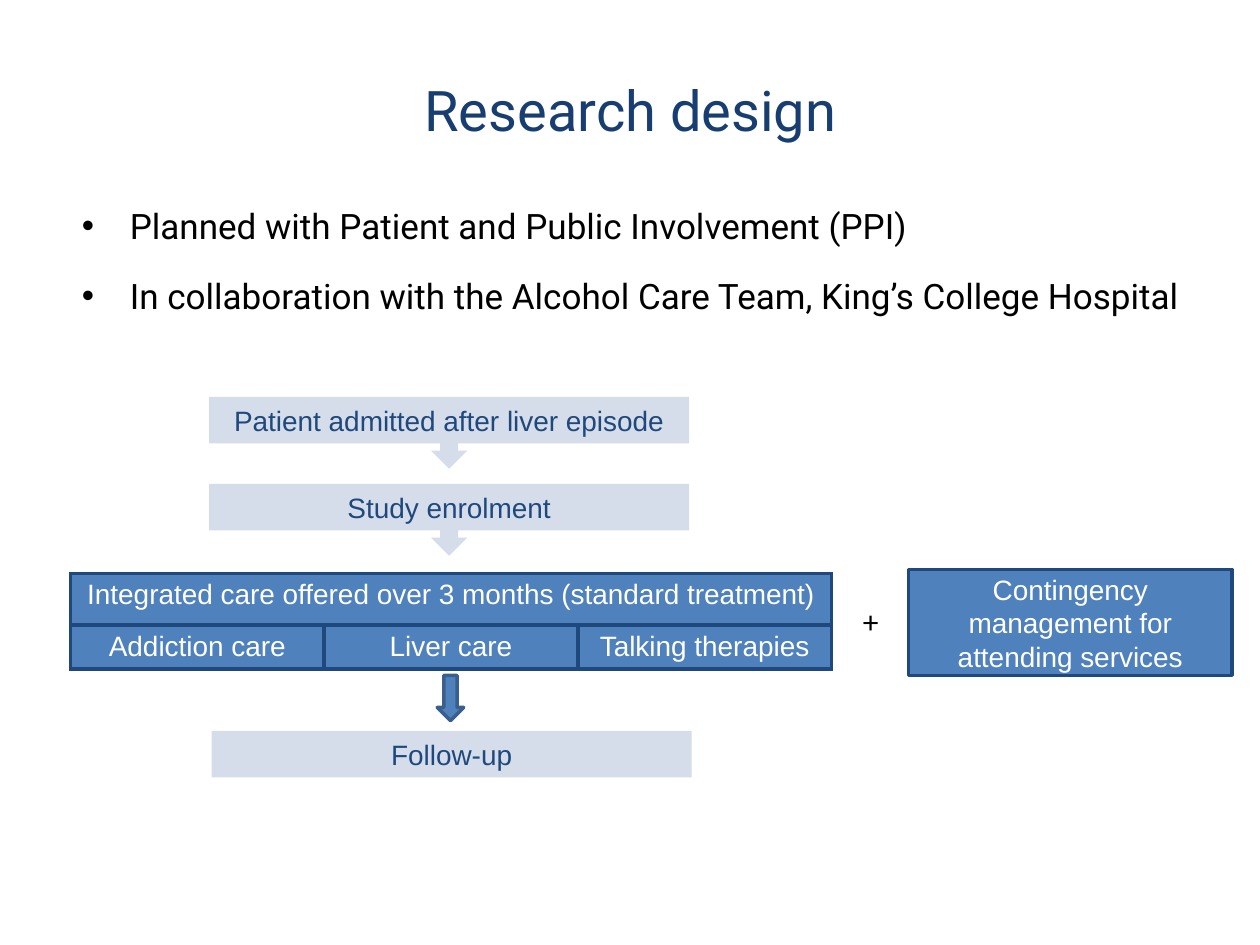
from lxml import etree
from pptx import Presentation
from pptx.dml.color import RGBColor
from pptx.enum import shapes, text
from pptx.oxml import ns
from pptx.util import Inches, Pt

# Content
TITLE = "Research design"
POINTS = ["Planned with Patient and Public Involvement (PPI)",
          "In collaboration with the Alcohol Care Team, King’s College Hospital"]
STEPS = ["Patient admitted after liver episode", "Study enrolment"]
CARE = "Integrated care offered over 3 months (standard treatment)"
PARTS = ["Addiction care", "Liver care", "Talking therapies"]
EXTRA = "Contingency management for attending services"
LAST = "Follow-up"

COLORS = {"title": "183D71", "ink": "000000", "navy": "1F497D", "blue": "4F81BD",
          "edge": "3A5F8C", "pale": "D5DCEA", "white": "FFFFFF"}
KIND = shapes.MSO_SHAPE
ALIGN = text.PP_ALIGN


def rgb(name):
    return RGBColor.from_string(COLORS[name])


def style(para, size, face, color, align=ALIGN.CENTER):
    para.alignment = align
    for run in para.runs:
        font = run.font
        font.size, font.name, font.bold = Pt(size), face, False
        font.color.rgb = rgb(color)


def place(item, *box):
    item.left, item.top, item.width, item.height = map(Inches, box)


def add_box(kind, box, fill, words="", color="navy", line=None):
    shape = slide.shapes.add_shape(kind, *map(Inches, box))
    shape.shadow.inherit = False
    shape.fill.solid()
    shape.fill.fore_color.rgb = rgb(fill)
    if line:
        shape.line.color.rgb = rgb(line)
        shape.line.width = Pt(2)
    else:
        shape.line.fill.background()
    if words:
        frame = shape.text_frame
        frame.word_wrap = True
        frame.vertical_anchor = text.MSO_ANCHOR.MIDDLE
        frame.text = words
        style(frame.paragraphs[0], 16, "Arial", color)


def set_frame(frame, top):
    frame.margin_left = frame.margin_right = frame.margin_bottom = 0
    frame.margin_top = Inches(top)
    frame.vertical_anchor = text.MSO_ANCHOR.TOP
    frame.auto_size = text.MSO_AUTO_SIZE.NONE
    frame.word_wrap = True


def add_bullet(para):
    props = para._p.get_or_add_pPr()
    props.set("marL", str(Inches(0.39)))
    props.set("indent", str(Inches(-0.38)))
    font = etree.SubElement(props, ns.qn("a:buFont"))
    font.set("typeface", "Arial")
    etree.SubElement(props, ns.qn("a:buChar")).set("char", "•")


def fill_cell(cell, words):
    cell.text = words
    style(cell.text_frame.paragraphs[0], 16, "Arial", "white")


def paint_cell(cell):
    cell.fill.solid()
    cell.fill.fore_color.rgb = rgb("blue")
    props = cell._tc.get_or_add_tcPr()
    for i, side in enumerate("LRTB"):
        line = etree.Element(ns.qn("a:ln" + side), w=str(Pt(2.25)))
        fill = etree.SubElement(line, ns.qn("a:solidFill"))
        etree.SubElement(fill, ns.qn("a:srgbClr")).set("val", COLORS["navy"])
        props.insert(i, line)


prs = Presentation()
prs.slide_width, prs.slide_height = Inches(10), Inches(7.5)
slide = prs.slides.add_slide(prs.slide_layouts[1])

# Title and bullets
title, body = slide.placeholders
place(title, 0.64, 0.59, 8.73, 0.56)
set_frame(title.text_frame, 0.01)
title.text_frame.text = TITLE
style(title.text_frame.paragraphs[0], 32, "Roboto", "title")

place(body, 0.64, 1.41, 9.2, 1.06)
set_frame(body.text_frame, 0.05)
body.text_frame.text = "\n".join(POINTS)
for i, para in enumerate(body.text_frame.paragraphs):
    add_bullet(para)
    para.line_spacing = 1.5
    para.space_before = Pt(3.8 if i else 0)
    style(para, 20, "Roboto", "ink", ALIGN.LEFT)

# Steps before treatment
for i, step in enumerate(STEPS):
    add_box(KIND.DOWN_ARROW_CALLOUT, (1.66, 3.15 + 0.69 * i, 3.81, 0.57), "pale", step)

# Standard treatment table
table = slide.shapes.add_table(2, len(PARTS), *map(Inches, (0.56, 4.55, 6.04, 0.76))).table
table.first_row = table.horz_banding = False
for row, height in zip(table.rows, (0.41, 0.35)):
    row.height = Inches(height)
table.cell(0, 0).merge(table.cell(0, len(PARTS) - 1))
fill_cell(table.cell(0, 0), CARE)
for col, part in enumerate(PARTS):
    fill_cell(table.cell(1, col), part)
for cell in table.iter_cells():
    paint_cell(cell)

# Added treatment
plus = slide.shapes.add_textbox(*map(Inches, (6.75, 4.73, 0.4, 0.4))).text_frame
plus.word_wrap = True
plus.text = "+"
style(plus.paragraphs[0], 18, "Calibri", "ink", ALIGN.LEFT)
add_box(KIND.RECTANGLE, (7.21, 4.52, 2.57, 0.84), "blue", EXTRA, "white", "navy")

# Follow-up
add_box(KIND.DOWN_ARROW, (3.47, 5.36, 0.21, 0.36), "blue", line="edge")
add_box(KIND.RECTANGLE, (1.68, 5.8, 3.81, 0.37), "pale", LAST)

prs.save("out.pptx")
